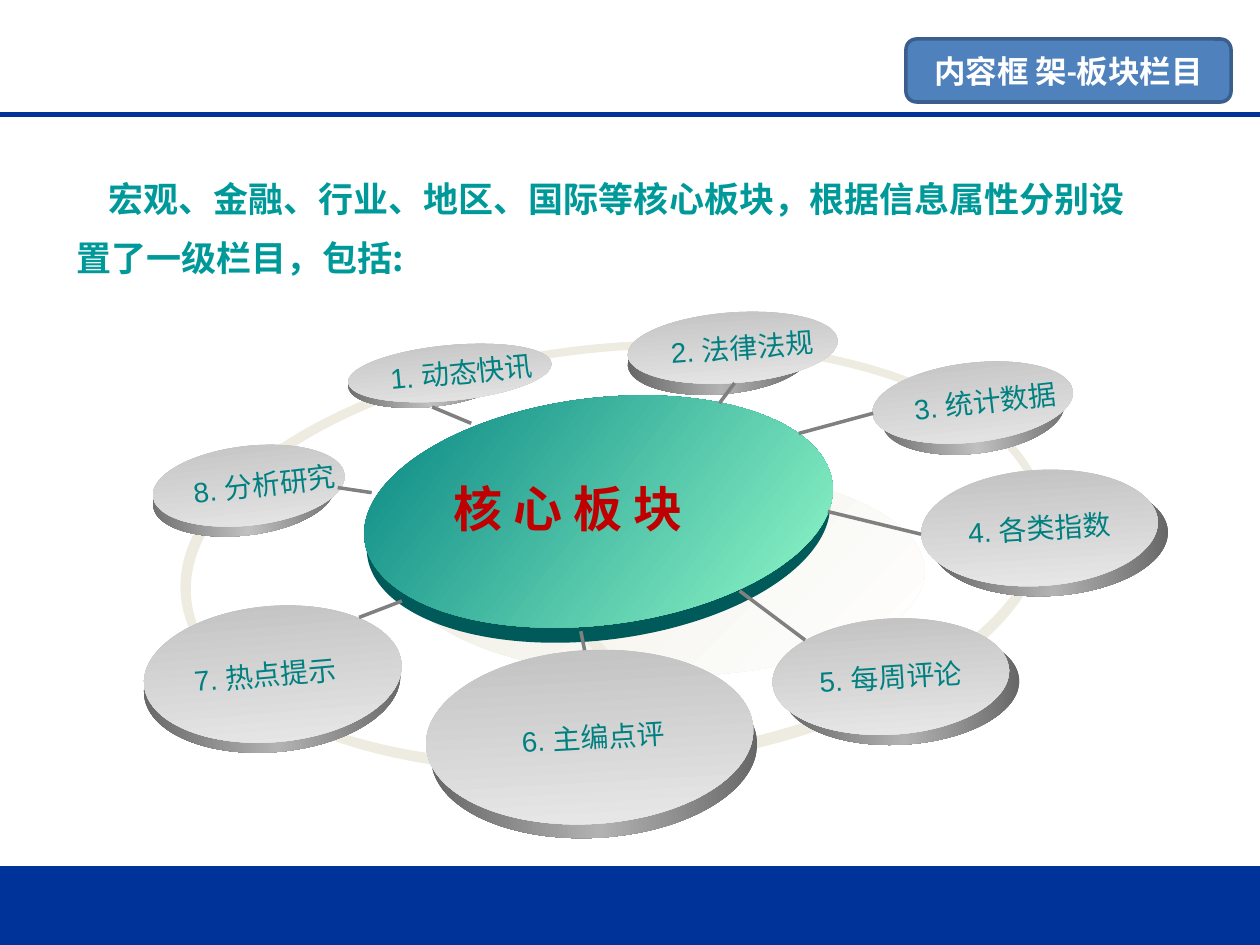
from dataclasses import dataclass

from lxml import etree
from pptx import Presentation
from pptx.dml.color import RGBColor
from pptx.enum.shapes import MSO_CONNECTOR, MSO_SHAPE
from pptx.enum.text import MSO_ANCHOR, MSO_AUTO_SIZE, PP_ALIGN
from pptx.oxml.ns import qn
from pptx.util import Inches, Pt

ELLIPSE, ROUNDED = MSO_SHAPE.OVAL, MSO_SHAPE.ROUNDED_RECTANGLE
STRAIGHT = MSO_CONNECTOR.STRAIGHT
TOP, MIDDLE = MSO_ANCHOR.TOP, MSO_ANCHOR.MIDDLE
LEFT, CENTER = PP_ALIGN.LEFT, PP_ALIGN.CENTER
FIXED = MSO_AUTO_SIZE.NONE
COLUMNS, ROWS = 10, 7.5
TITLE_ONLY = 5


@dataclass(frozen=True)
class Theme:
    navy: str = "003399"
    badge: str = "4F81BD"
    badge_edge: str = "3A5F8C"
    white: str = "FFFFFF"
    intro: str = "009999"
    label: str = "008080"
    core: str = "C00000"
    core_rim: str = "005A5A"
    orbit: str = "EEECE1"
    spoke: str = "808080"
    core_face: tuple = ("008080", "99FFCC")
    core_shadow: tuple = ("EEECE1", "FFFFFF")
    face: tuple = ("C0C0C0", "EAEAEA")
    soft_rim: tuple = ("6B6B6B", "C0C0C0", "6B6B6B")
    deep_rim: tuple = ("636363", "B2B2B2", "636363")
    latin: str = "Arial"
    heading: str = "Calibri"
    chinese: str = "Noto Sans CJK SC"
    label_size: int = 16
    badge_size: int = 18
    intro_size: int = 20
    core_size: int = 28


class SlideBuilder:
    def __init__(self, deck, theme):
        self.theme = theme
        self.column = deck.slide_width / COLUMNS
        self.row = deck.slide_height / ROWS
        self.slide = deck.slides.add_slide(deck.slide_layouts[TITLE_ONLY])

    def place(self, *lengths):
        units = (self.column, self.row) * 2
        return [int(length * unit) for length, unit in zip(lengths, units)]

    def line(self, start, end, color, weight):
        connector = self.slide.shapes.add_connector(
            STRAIGHT, *self.place(*start, *end))
        connector.line.color.rgb = RGBColor.from_string(color)
        connector.line.width = Pt(weight)
        etree.SubElement(connector._element.spPr, qn("a:effectLst"))

    def shape(self, kind, area, fill=None, edge=None, weight=0, turn=0):
        item = self.slide.shapes.add_shape(kind, *self.place(*area))
        item.shadow.inherit = False
        item.rotation = turn
        for part, color in ((item.fill, fill), (item.line.fill, edge)):
            if color:
                part.solid()
                part.fore_color.rgb = RGBColor.from_string(color)
            else:
                part.background()
        if edge:
            item.line.width = Pt(weight)
        return item

    def disc(self, area, colors, angle, turn=0):
        item = self.shape(ELLIPSE, area, turn=turn)
        item.fill.gradient()
        item.fill.gradient_angle = -angle % 360
        stops = item._element.spPr.find(qn("a:gradFill")).find(qn("a:gsLst"))
        stops.clear()
        for index, color in enumerate(colors):
            position = 100000 * index // (len(colors) - 1)
            stop = etree.SubElement(stops, qn("a:gs"), pos=str(position))
            etree.SubElement(stop, qn("a:srgbClr"), val=color)
        return item

    def fill_text(self, item, words, color, size, font, bold=False,
                  anchor=TOP, align=LEFT, wrap=True):
        frame = item.text_frame
        layout = {"word_wrap": wrap, "vertical_anchor": anchor,
                  "auto_size": FIXED}
        for name, value in layout.items():
            setattr(frame, name, value)
        paragraph = frame.paragraphs[0]
        paragraph.alignment = align
        run = paragraph.add_run()
        run.text = words
        style = {"size": Pt(size), "name": font, "bold": bold}
        for name, value in style.items():
            setattr(run.font, name, value)
        run.font.color.rgb = RGBColor.from_string(color)
        etree.SubElement(run._r.get_or_add_rPr(), qn("a:ea"),
                         typeface=self.theme.chinese)
        return paragraph

    def text(self, area, words, color, size):
        item = self.slide.shapes.add_textbox(*self.place(*area))
        return self.fill_text(item, words, color, size,
                              self.theme.chinese, True)

    def station(self, words, area, turn, rim, rim_colors, inset=0.1):
        x, y, width, height = area
        shift, drop, rim_width = rim
        self.disc((x + shift, y + drop, rim_width, height),
                  rim_colors, 0, turn)
        face = self.disc(area, self.theme.face, 90, turn)
        face.text_frame.margin_left = int(inset * self.column)
        self.fill_text(face, words, self.theme.label, self.theme.label_size,
                       self.theme.latin, anchor=MIDDLE, wrap=False)

    def title(self, area, words):
        theme = self.theme
        self.shape(ROUNDED, area, theme.badge, theme.badge_edge, 2)
        heading = self.slide.shapes.title
        bounds = zip(("left", "top", "width", "height"), self.place(*area))
        for name, value in bounds:
            setattr(heading, name, value)
        self.fill_text(heading, words, theme.white, theme.badge_size,
                       theme.heading, True, MIDDLE, CENTER)
        self.slide.shapes._spTree.append(heading._element)


def main():
    theme = Theme()
    deck = Presentation()
    deck.slide_width, deck.slide_height = Inches(10), Inches(7.5)
    page = SlideBuilder(deck, theme)

    for level, weight in ((0.91, 3), (7.22, 50)):
        page.line((0, level), (COLUMNS, level), theme.navy, weight)

    page.disc((3.18, 3.7, 4.16, 1.67), theme.core_shadow, 45)
    page.line((5.3, 5.74), (3.86, 4.17), theme.orbit, 6)
    page.shape(ELLIPSE, (2.9, 3.28, 3.7, 1.8), theme.core_rim, turn=353)
    page.disc((2.88, 3.16, 3.74, 1.8), theme.core_face, 45, 353)
    orbits = (((1.47, 2.76, 6.82, 3.32), 4.5), ((1.44, 2.75, 6.84, 3.29), 3))
    for area, weight in orbits:
        page.shape(ELLIPSE, area, edge=theme.orbit, weight=weight, turn=354.3)
    page.text((3.5, 3.75, 2.52, 0.57), "核 心 板 块",
              theme.core, theme.core_size)

    soft, deep = theme.soft_rim, theme.deep_rim
    stations = (
        ("8. 分析研究", (1.21, 3.54, 1.53, 0.63), 353.4, (0, 0.08, 1.45), soft),
        ("1. 动态快讯", (2.76, 2.74, 1.62, 0.44), 354.6, (0, 0.05, 1.28), soft),
        ("2. 法律法规", (4.98, 2.48, 1.67, 0.56), 355.8, (0, 0.09, 1.45), deep),
        ("5. 每周评论", (6.13, 4.91, 1.88, 0.92), 356.5, (0.08, 0.08, 1.88), deep),
        ("6. 主编点评", (3.38, 5.16, 2.6, 1.38), 356.7, (0.04, 0.11, 2.59), deep, 0.38),
        ("7. 热点提示", (1.14, 4.81, 2.05, 1.08), 355.1, (0, 0.08, 2.04), deep),
        ("3. 统计数据", (6.92, 2.88, 1.6, 0.63), 353.4, (0.08, 0.09, 1.45), soft),
        ("4. 各类指数", (7.31, 3.73, 1.88, 0.92), 356.5, (0.08, 0.08, 1.88), deep),
    )
    for station in stations:
        page.station(*station)

    intro = page.text(
        (0.51, 1.23, 8.58, 1.02),
        "宏观、金融、行业、地区、国际等核心板块，根据信息属性分别设置了一级栏目，包括:",
        theme.intro, theme.intro_size)
    intro.line_spacing = 1.4
    intro.space_after = Pt(12)
    intro._p.get_or_add_pPr().set("indent", str(Inches(0.25)))

    spokes = (
        ((3.43, 3.23), (3.74, 3.36)),
        ((2.68, 3.87), (2.95, 3.91)),
        ((2.85, 4.9), (3.19, 4.77)),
        ((4.64, 5.16), (4.61, 5.01)),
        ((6.39, 5.08), (5.87, 4.69)),
        ((7.31, 4.24), (6.57, 4.06)),
        ((6.93, 3.28), (6.34, 3.44)),
        ((5.83, 3.04), (5.71, 3.2)),
    )
    for outer, inner in spokes:
        page.line(outer, inner, theme.spoke, 2)

    page.title((7.19, 0.31, 2.58, 0.5), "内容框 架-板块栏目")
    deck.save("out.pptx")


if __name__ == "__main__":
    main()
